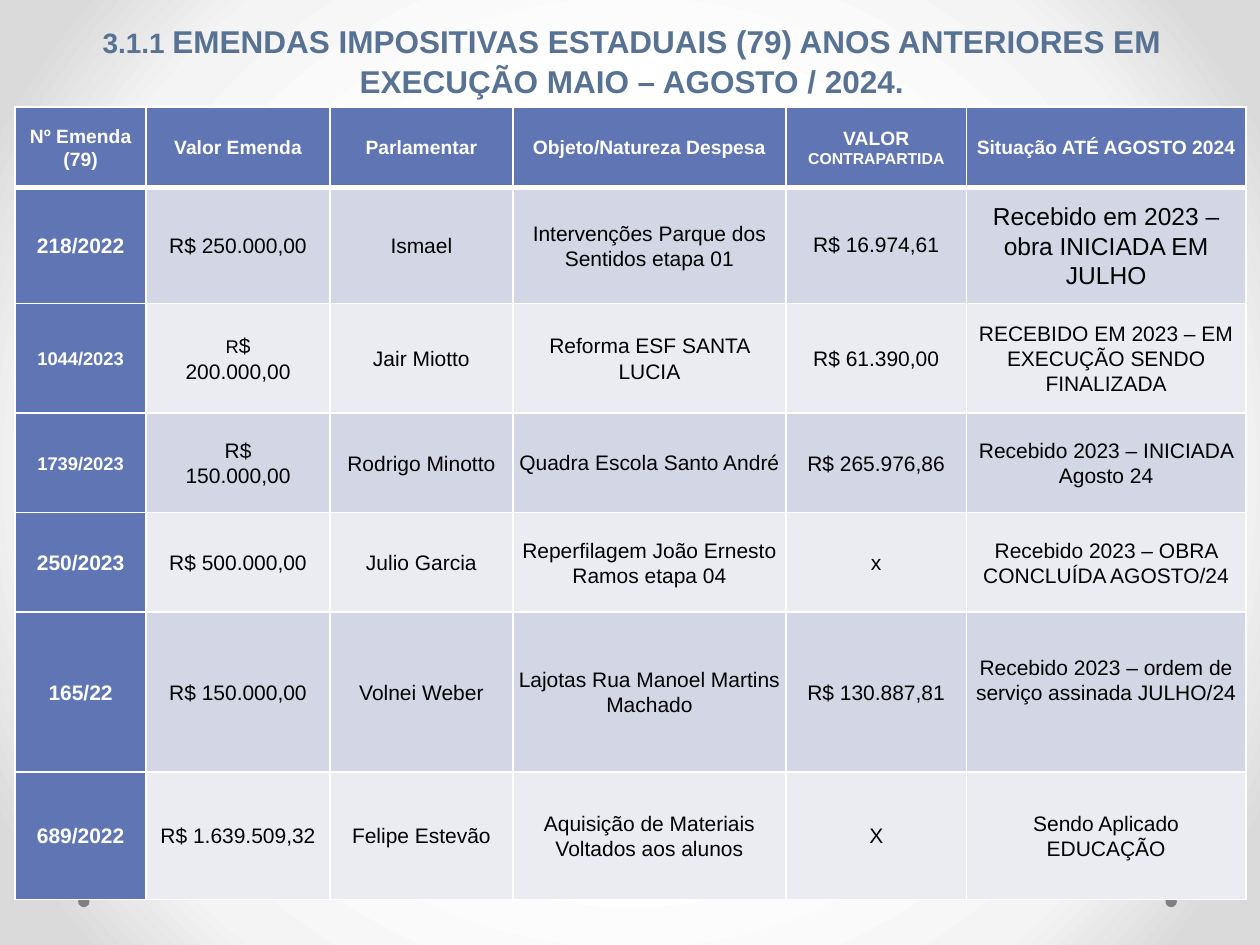
from dataclasses import dataclass
from typing import Optional

import lxml.etree
import pptx
import pptx.dml.color
import pptx.enum.shapes
import pptx.enum.text
import pptx.oxml.ns
import pptx.util

Inches = pptx.util.Inches
Pt = pptx.util.Pt
RGBColor = pptx.dml.color.RGBColor
qn = pptx.oxml.ns.qn

WHITE = RGBColor(0xFF, 0xFF, 0xFF)
BLACK = RGBColor(0x00, 0x00, 0x00)
BLUE = RGBColor(0x60, 0x76, 0xB4)
SLATE = RGBColor(0x57, 0x72, 0x93)
GREY = RGBColor(0x80, 0x80, 0x80)
BAND_DARK = RGBColor(0xD2, 0xD6, 0xE5)
BAND_LIGHT = RGBColor(0xEA, 0xEC, 0xF2)
GLOW_STOPS = (
    (50, WHITE),
    (76, RGBColor(0xF4, 0xF4, 0xF4)),
    (92, RGBColor(0xDA, 0xDA, 0xDA)),
)

CENTER = pptx.enum.text.PP_ALIGN.CENTER
MIDDLE = pptx.enum.text.MSO_ANCHOR.MIDDLE
CELL_FORMAT = {
    "vertical_anchor": MIDDLE,
    "margin_left": Inches(0.04),
    "margin_right": Inches(0.04),
    "margin_top": Inches(0),
    "margin_bottom": Inches(0),
}
COLUMN_WIDTHS = (1.04, 1.46, 1.45, 2.17, 1.43, 2.22)
ROW_HEIGHTS = (0.64, 0.92, 0.87, 0.79, 0.79, 1.27, 1.01)


@dataclass(frozen=True)
class Span:
    text: str
    size: float = 12
    break_before: bool = False


@dataclass(frozen=True)
class Entry:
    spans: tuple[Span, ...]
    spacing: Optional[float] = 1.07
    lift: float = 0


def entry(text: str, size: float = 12, **options) -> Entry:
    return Entry((Span(text, size),), **options)


HEADER = (
    entry("Nº Emenda (79)", 11),
    entry("Valor Emenda", 11),
    entry("Parlamentar", 11),
    entry("Objeto/Natureza Despesa", 11),
    Entry((Span("VALOR ", 11), Span("CONTRAPARTIDA", 9))),
    entry("Situação ATÉ AGOSTO 2024", 11),
)
AMENDMENTS = (
    (
        entry("218/2022"), entry("R$ 250.000,00"), entry("Ismael"),
        entry("Intervenções Parque dos Sentidos etapa 01"),
        entry("R$ 16.974,61", spacing=None),
        entry("Recebido em 2023 – obra INICIADA EM JULHO", 14),
    ),
    (
        entry("1044/2023", 10.5),
        Entry((Span("R", 10.5), Span("$"), Span("200.000,00", break_before=True))),
        entry("Jair Miotto"), entry("Reforma ESF SANTA LUCIA"),
        entry("R$ 61.390,00"),
        entry("RECEBIDO EM 2023 – EM EXECUÇÃO SENDO FINALIZADA"),
    ),
    (
        entry("1739/2023", 10.5),
        Entry((Span("R$"), Span("150.000,00", break_before=True))),
        entry("Rodrigo Minotto"),
        entry("Quadra Escola Santo André", spacing=None),
        entry("R$ 265.976,86"), entry("Recebido 2023 – INICIADA Agosto 24"),
    ),
    (
        entry("250/2023"), entry("R$ 500.000,00"), entry("Julio Garcia"),
        entry("Reperfilagem João Ernesto Ramos etapa 04"), entry("x"),
        entry("Recebido 2023 – OBRA CONCLUÍDA AGOSTO/24"),
    ),
    (
        entry("165/22"), entry("R$ 150.000,00"), entry("Volnei Weber"),
        entry("Lajotas Rua Manoel Martins Machado"), entry("R$ 130.887,81"),
        entry("Recebido 2023 – ordem de serviço assinada JULHO/24", lift=0.19),
    ),
    (
        entry("689/2022"), entry("R$ 1.639.509,32"), entry("Felipe Estevão"),
        entry("Aquisição de Materiais Voltados aos alunos"), entry("X"),
        entry("Sendo Aplicado EDUCAÇÃO"),
    ),
)


def apply_format(target: object, values: dict) -> None:
    for name, value in values.items():
        setattr(target, name, value)


def write_spans(para, spans: tuple[Span, ...], color: RGBColor, bold: bool) -> None:
    para.alignment = CENTER
    for span in spans:
        if span.break_before:
            para.add_line_break()
        run = para.add_run()
        run.text = span.text
        apply_format(run.font, {"name": "Arial", "size": Pt(span.size), "bold": bold})
        run.font.color.rgb = color


def paint_background(slide) -> None:
    slide.background.fill.gradient()
    gradient = slide.element.find(".//" + qn("a:gradFill"))
    for child in list(gradient):
        gradient.remove(child)
    stops = lxml.etree.SubElement(gradient, qn("a:gsLst"))
    for position, color in GLOW_STOPS:
        stop = lxml.etree.SubElement(stops, qn("a:gs"), pos=str(position * 1000))
        lxml.etree.SubElement(stop, qn("a:srgbClr"), val=str(color))
    circle = lxml.etree.SubElement(gradient, qn("a:path"), {"path": "circle"})
    sides = dict.fromkeys("ltrb", "50000")
    lxml.etree.SubElement(circle, qn("a:fillToRect"), sides)


def add_dot(slide, left: float) -> None:
    dot = slide.shapes.add_shape(
        pptx.enum.shapes.MSO_SHAPE.OVAL,
        Inches(left), Inches(7.11), Inches(0.09), Inches(0.09),
    )
    dot.shadow.inherit = False
    dot.fill.solid()
    dot.fill.fore_color.rgb = GREY
    dot.line.fill.background()


def write_title(slide) -> None:
    title = slide.shapes.title
    apply_format(title, {
        "left": Inches(0.59), "top": Inches(0.19),
        "width": Inches(8.85), "height": Inches(0.6),
    })
    frame = title.text_frame
    apply_format(frame, {
        "word_wrap": True, "margin_top": 0, "margin_bottom": 0,
        "vertical_anchor": pptx.enum.text.MSO_ANCHOR.BOTTOM,
    })
    heading = "EMENDAS IMPOSITIVAS ESTADUAIS (79) ANOS ANTERIORES EM EXECUÇÃO MAIO – AGOSTO / 2024."
    write_spans(frame.paragraphs[0], (Span("3.1.1 ", 16), Span(heading, 18)), SLATE, True)
    frame.paragraphs[0].line_spacing = 1.05


def add_borders(cell, bottom: float) -> None:
    properties = cell._tc.get_or_add_tcPr()
    widths = {"a:lnL": 1, "a:lnR": 1, "a:lnT": 1, "a:lnB": bottom}
    for index, (tag, width) in enumerate(widths.items()):
        line = lxml.etree.Element(qn(tag), w=str(Pt(width)))
        fill = lxml.etree.SubElement(line, qn("a:solidFill"))
        lxml.etree.SubElement(fill, qn("a:srgbClr"), val=str(WHITE))
        properties.insert(index, line)


def fill_cell(cell, content: Entry, fill: RGBColor, strong: bool, bottom: float) -> None:
    apply_format(cell, CELL_FORMAT | {"margin_bottom": Inches(content.lift)})
    cell.fill.solid()
    cell.fill.fore_color.rgb = fill
    para = cell.text_frame.paragraphs[0]
    write_spans(para, content.spans, WHITE if strong else BLACK, strong)
    para.line_spacing = content.spacing
    add_borders(cell, bottom)


def add_amendments_table(slide) -> None:
    rows = (HEADER, *AMENDMENTS)
    table = slide.shapes.add_table(
        len(rows), len(HEADER), Inches(0.12), Inches(0.85),
        Inches(sum(COLUMN_WIDTHS)), Inches(sum(ROW_HEIGHTS)),
    ).table
    table.horz_banding = False
    for column, width in zip(table.columns, COLUMN_WIDTHS):
        column.width = Inches(width)
    for row_index, (row, height) in enumerate(zip(rows, ROW_HEIGHTS)):
        table.rows[row_index].height = Inches(height)
        band = BAND_DARK if row_index % 2 else BAND_LIGHT
        for column_index, content in enumerate(row):
            strong = row_index == 0 or column_index == 0
            fill_cell(table.cell(row_index, column_index), content,
                      BLUE if strong else band, strong, 1 if row_index else 3)


def main() -> None:
    deck = pptx.Presentation()
    apply_format(deck, {"slide_width": Inches(10), "slide_height": Inches(7.5)})
    slide = deck.slides.add_slide(deck.slide_layouts[5])
    paint_background(slide)
    for left in (9.25, 0.62):
        add_dot(slide, left)
    write_title(slide)
    add_amendments_table(slide)
    deck.save("out.pptx")


if __name__ == "__main__":
    main()
